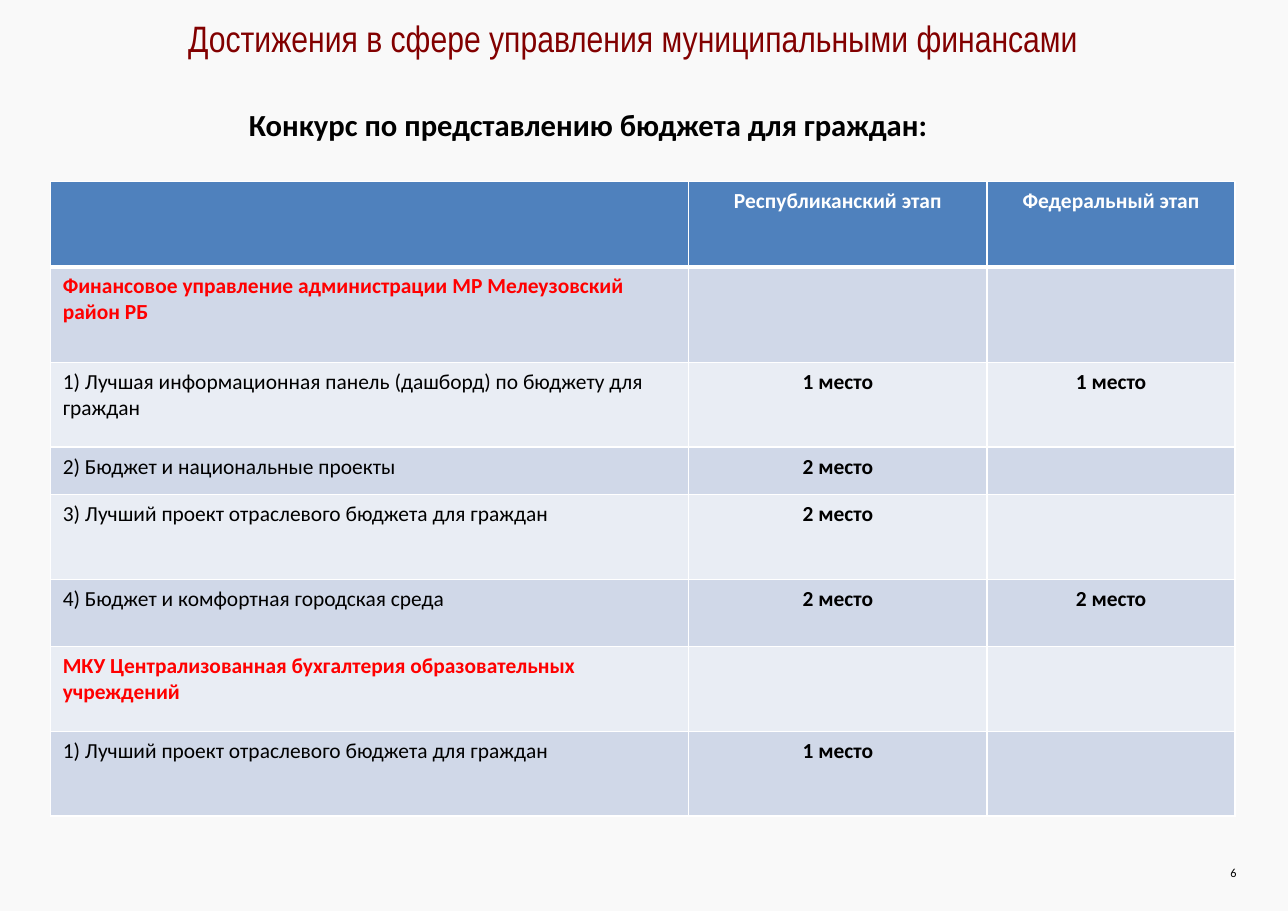
from lxml.etree import SubElement
from pptx import Presentation
from pptx.dml.color import RGBColor
from pptx.enum.text import MSO_ANCHOR as Anchor, PP_ALIGN as Align
from pptx.oxml.ns import qn
from pptx.util import Inches, Pt

COLORS = {
    "page": "F9F9F9", "title": "820000", "text": "000000", "white": "FFFFFF",
    "header": "4F81BD", "odd": "D0D8E8", "even": "E9EDF4", "group": "FF0000",
}
COLUMN_WIDTHS = [5.79, 2.71, 2.25]
ROW_HEIGHTS = [0.77, 0.87, 0.77, 0.43, 0.77, 0.61, 0.77, 0.77]
ROWS = [
    ("", "Республиканский этап", "Федеральный этап"),
    ("Финансовое управление администрации МР Мелеузовский район РБ", "", ""),
    ("1) Лучшая информационная панель (дашборд) по бюджету для граждан", "1 место", "1 место"),
    ("2) Бюджет и национальные проекты", "2 место", ""),
    ("3) Лучший проект отраслевого бюджета для граждан", "2 место", ""),
    ("4) Бюджет и комфортная городская среда", "2 место", "2 место"),
    ("МКУ Централизованная бухгалтерия образовательных учреждений", "", ""),
    ("1) Лучший проект отраслевого бюджета для граждан", "1 место", ""),
]
GROUP_ROWS = (1, 6)
CELL_MARGINS = {"margin_left": 0.11, "margin_right": 0.11, "margin_top": 0.06, "margin_bottom": 0.06}
TITLE_MARGINS = {"margin_left": 0, "margin_right": 0, "margin_top": 0.01, "margin_bottom": 0}


def color(name):
    return RGBColor.from_string(COLORS[name])


def set_margins(target, margins):
    for name, value in margins.items():
        setattr(target, name, Inches(value))


def write(frame, text, size, ink="text", bold=False, align=Align.LEFT, font="Calibri"):
    para = frame.paragraphs[0]
    para.alignment = align
    span = para.add_run()
    span.text = text
    for name, value in {"name": font, "size": Pt(size), "bold": bold}.items():
        setattr(span.font, name, value)
    span.font.color.rgb = color(ink)


def add_text(page, position, text, size, margins=None, anchor=Anchor.TOP, **style):
    box = page.shapes.add_textbox(*map(Inches, position))
    frame = box.text_frame
    frame.word_wrap = True
    frame.vertical_anchor = anchor
    set_margins(frame, margins or {})
    write(frame, text, size, **style)


def set_borders(cell, row):
    properties = cell._tc.get_or_add_tcPr()
    widths = {"lnL": 1, "lnR": 1, "lnT": 3 if row == 1 else 1, "lnB": 3 if row == 0 else 1}
    for side, width in widths.items():
        line = SubElement(properties, qn(f"a:{side}"), w=str(Pt(width)))
        fill = SubElement(line, qn("a:solidFill"))
        SubElement(fill, qn("a:srgbClr"), val=COLORS["white"])


def fill_cell(cell, row, column, text):
    set_margins(cell, CELL_MARGINS)
    set_borders(cell, row)
    cell.fill.solid()
    cell.fill.fore_color.rgb = color("header" if row == 0 else "odd" if row % 2 else "even")
    if text:
        ink = "white" if row == 0 else "group" if row in GROUP_ROWS else "text"
        write(cell.text_frame, text, 14, ink=ink, bold=column > 0 or row in GROUP_ROWS,
              align=Align.CENTER if column else Align.LEFT)


def add_awards_table(page):
    size = (sum(COLUMN_WIDTHS), sum(ROW_HEIGHTS))
    table = page.shapes.add_table(len(ROWS), len(COLUMN_WIDTHS), *map(Inches, (0.46, 1.65, *size))).table
    for column, width in zip(table.columns, COLUMN_WIDTHS):
        column.width = Inches(width)
    for row, height in zip(table.rows, ROW_HEIGHTS):
        row.height = Inches(height)
    for row, texts in enumerate(ROWS):
        for column, text in enumerate(texts):
            fill_cell(table.cell(row, column), row, column, text)


def main():
    deck = Presentation()
    deck.slide_width, deck.slide_height = Inches(11.69), Inches(8.27)
    page = deck.slides.add_slide(deck.slide_layouts[6])
    page.background.fill.solid()
    page.background.fill.fore_color.rgb = color("page")
    add_awards_table(page)
    add_text(page, (2.16, 0.91, 8.57, 0.45), "Конкурс по представлению бюджета для граждан:", 20, bold=True)
    add_text(page, (0.18, 0.13, 11.13, 0.42), "Достижения в сфере управления муниципальными финансами", 24,
             margins=TITLE_MARGINS, ink="title", align=Align.CENTER, font="Arial Narrow")
    add_text(page, (11.04, 7.8, 0.31, 0.24), "6", 8, anchor=Anchor.MIDDLE, align=Align.CENTER)
    deck.save("out.pptx")


if __name__ == "__main__":
    main()
